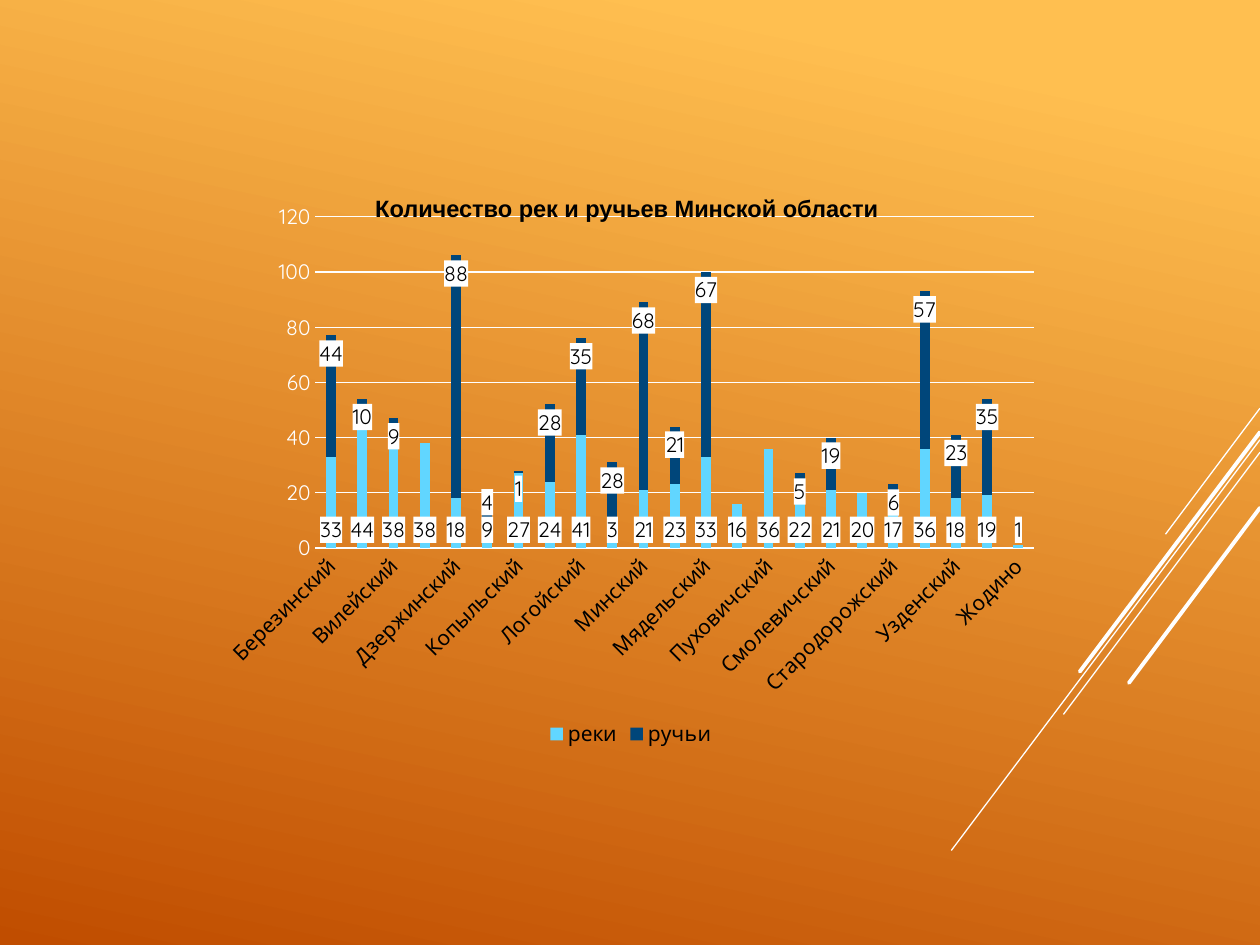
from lxml import etree
from pptx import Presentation
from pptx.chart.data import CategoryChartData
from pptx.dml.color import RGBColor
from pptx.enum.chart import XL_CHART_TYPE as ChartType
from pptx.enum.chart import XL_LABEL_POSITION as LabelPos
from pptx.enum.chart import XL_LEGEND_POSITION as LegendPos
from pptx.enum.chart import XL_TICK_MARK as TickMark
from pptx.enum.shapes import MSO_CONNECTOR as Connector
from pptx.enum.text import MSO_ANCHOR, MSO_AUTO_SIZE, PP_ALIGN
from pptx.oxml import parse_xml
from pptx.oxml.ns import nsdecls, qn
from pptx.util import Inches, Pt

WHITE = RGBColor(0xFF, 0xFF, 0xFF)
BLACK = RGBColor(0, 0, 0)
AMBER = RGBColor(0xFF, 0xBF, 0x50)
RUST = RGBColor(0xC0, 0x4D, 0x00)
SKY = RGBColor(0x61, 0xD6, 0xFF)
NAVY = RGBColor(0x00, 0x46, 0x7A)
CHART_FONT = "Quicksand"
TITLE = "Количество рек и ручьев Минской области"

# District, rivers, streams
DISTRICTS = [
    ("Березинский", 33, 44), ("Борисовский", 44, 10), ("Вилейский", 38, 9),
    ("Воложинский", 38, None), ("Дзержинский", 18, 88), ("Клецкий", 9, 4),
    ("Копыльский", 27, 1), ("Крупский", 24, 28), ("Логойский", 41, 35),
    ("Любанский", 3, 28), ("Минский", 21, 68), ("Молодечненский", 23, 21),
    ("Мядельский", 33, 67), ("Несвижский", 16, None), ("Пуховичский", 36, None),
    ("Слуцкий", 22, 5), ("Смолевичский", 21, 19), ("Солигорский", 20, None),
    ("Стародорожский", 17, 6), ("Столбцовский", 36, 57), ("Узденский", 18, 23),
    ("Червенский", 19, 35), ("Жодино", 1, None),
]

# Height on the right edge, lower end x and y, weight
RAYS = [
    (3.24, 9.25, 4.24, 0.75),
    (3.49, 7.55, 6.75, 0.75),
    (3.59, 8.44, 5.67, 0.75),
    (3.43, 8.57, 5.33, 2.25),
    (4.03, 8.96, 5.42, 2.25),
]


def paint_background(page):
    fill = page.background.fill
    fill.gradient()
    fill.gradient_angle = 360 - 102
    for stop, color, position in zip(fill.gradient_stops, (AMBER, RUST), (0.1, 1)):
        stop.color.rgb = color
        stop.position = position


def add_rays(page, right):
    for top, x, y, weight in RAYS:
        ray = page.shapes.add_connector(
            Connector.STRAIGHT, right, Inches(top), Inches(x), Inches(y))
        ray.line.color.rgb = WHITE
        ray.line.width = Pt(weight)
        if weight > 1:
            ray.line._get_or_add_ln().set("cap", "rnd")
        etree.SubElement(ray._element.spPr, qn("a:effectLst"))


def set_font(font, color, size=12, name=CHART_FONT):
    font.name = name
    font.size = Pt(size)
    font.bold = False
    font.color.rgb = color


def manual_layout(**values):
    parts = "".join(f'<c:{key} val="{value}"/>' for key, value in values.items())
    return parse_xml(f'<c:layout {nsdecls("c")}><c:manualLayout>{parts}'
                     '</c:manualLayout></c:layout>')


def add_white_plate(element):
    """Put a white fill behind the labels."""
    element.find(qn("c:txPr")).addprevious(parse_xml(
        f'<c:spPr {nsdecls("c", "a")}><a:solidFill>'
        f'<a:srgbClr val="{WHITE}"/></a:solidFill></c:spPr>'))


def style_series(series, color, position):
    series.format.fill.solid()
    series.format.fill.fore_color.rgb = color
    labels = series.data_labels
    labels.show_value = True
    labels.position = position
    set_font(labels.font, BLACK)
    add_white_plate(labels._element)


def style_axes(chart):
    category, value = chart.category_axis, chart.value_axis
    for axis, color in ((category, BLACK), (value, WHITE)):
        axis.major_tick_mark = axis.minor_tick_mark = TickMark.NONE
        set_font(axis.tick_labels.font, color)
    category.format.line.color.rgb = WHITE
    category.format.line.width = Pt(0.75)
    # Slanted names, every second one shown
    category._element.find(qn("c:txPr")).find(qn("a:bodyPr")).set("rot", "-2700000")
    category._element.find(qn("c:noMultiLvlLbl")).addprevious(
        parse_xml(f'<c:tickLblSkip {nsdecls("c")} val="2"/>'))
    value.minimum_scale, value.maximum_scale, value.major_unit = 0, 120, 20
    value.format.line.fill.background()
    value.major_gridlines.format.line.color.rgb = WHITE
    value.major_gridlines.format.line.width = Pt(0.75)


def add_river_chart(page, left, top, width, height):
    names, rivers, streams = zip(*DISTRICTS)
    data = CategoryChartData()
    data.categories = names
    data.add_series("реки", rivers)
    data.add_series("ручьи", streams)
    chart = page.shapes.add_chart(
        ChartType.COLUMN_STACKED, left, top, width, height, data).chart
    chart.has_title = False
    set_font(chart.font, WHITE, 10)
    style_axes(chart)

    plot = chart.plots[0]
    plot.vary_by_categories = False
    plot.gap_width, plot.overlap = 219, 100
    river_series, stream_series = plot.series
    style_series(river_series, SKY, LabelPos.INSIDE_BASE)
    style_series(stream_series, NAVY, LabelPos.INSIDE_END)

    # Lift one stream label clear of the river label below it
    lifted = names.index("Клецкий")
    label = stream_series.points[lifted].data_label
    set_font(label.font, BLACK)
    label.position = LabelPos.INSIDE_END
    element = stream_series.data_labels._element.find(qn("c:dLbl"))
    add_white_plate(element)
    element.find(qn("c:idx")).addnext(manual_layout(x=0, y=-0.05))

    chart.has_legend = True
    chart.legend.position = LegendPos.BOTTOM
    chart.legend.include_in_layout = False
    set_font(chart.legend.font, BLACK)

    plot_area = chart._chartSpace.chart.plotArea
    for old in plot_area.findall(qn("c:layout")):
        plot_area.remove(old)
    plot_area.insert(0, manual_layout(
        layoutTarget="inner", xMode="edge", yMode="edge",
        x=0.125, y=0.043, w=0.855, h=0.592))


def add_title(page, left, top, width, height):
    box = page.shapes.add_textbox(left, top, width, height)
    frame = box.text_frame
    frame.word_wrap = False
    frame.auto_size = MSO_AUTO_SIZE.SHAPE_TO_FIT_TEXT
    frame.vertical_anchor = MSO_ANCHOR.TOP
    frame.text = TITLE
    para = frame.paragraphs[0]
    para.alignment = PP_ALIGN.CENTER
    span = para.runs[0]
    set_font(span.font, BLACK, 13.5, "Arial")
    span.font.bold = True


def main():
    deck = Presentation()
    deck.slide_width, deck.slide_height = Inches(10), Inches(7.5)
    page = deck.slides.add_slide(deck.slide_layouts[6])
    paint_background(page)
    add_rays(page, deck.slide_width)
    add_river_chart(page, Inches(1.67), Inches(1.53), Inches(6.67), Inches(4.44))
    add_title(page, Inches(2.85), Inches(1.49), Inches(4.25), Inches(0.33))
    deck.save("out.pptx")


if __name__ == "__main__":
    main()
